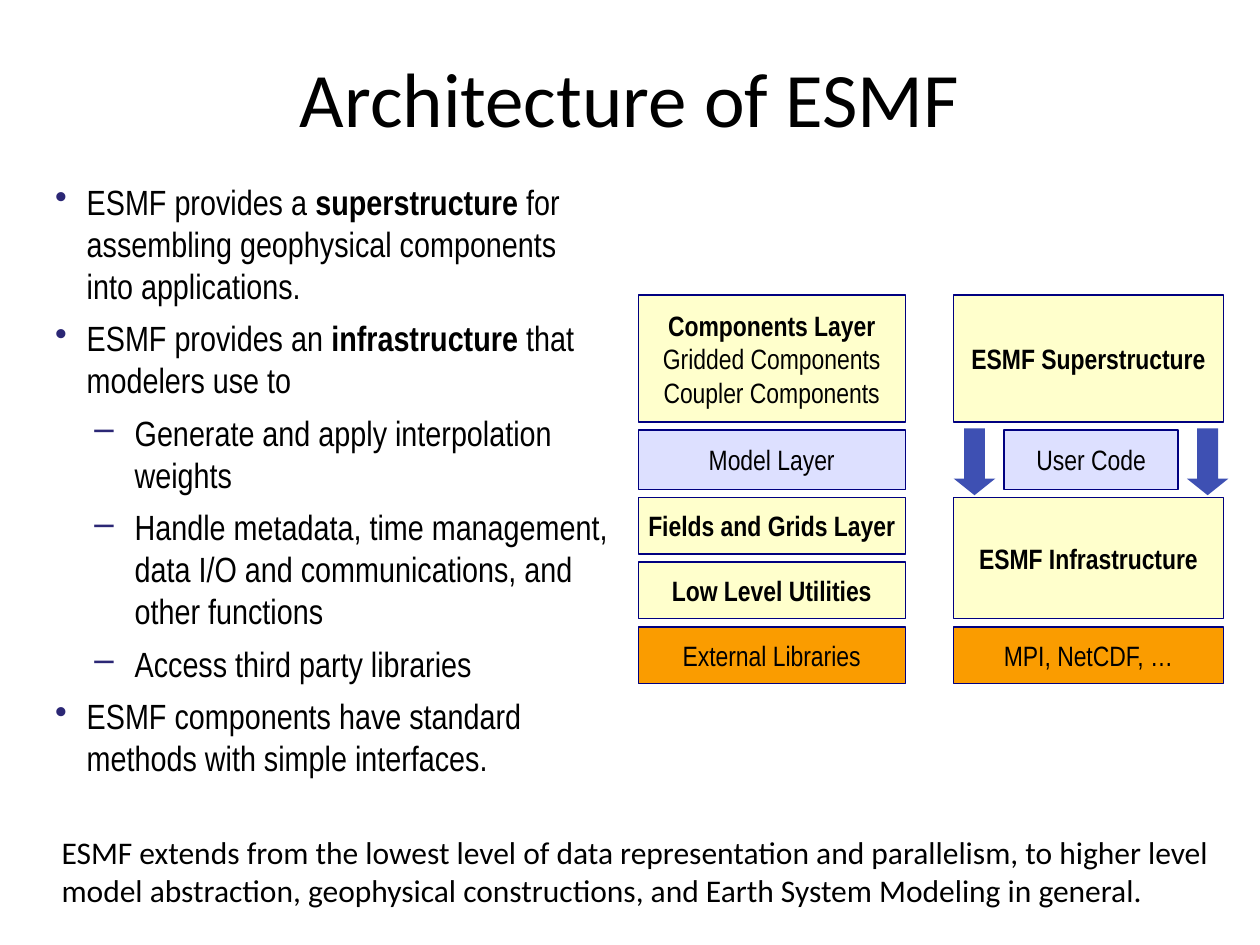
"""Build the ESMF architecture slide: bullets, layer stacks and a closing note."""
from lxml import etree
from pptx import Presentation
from pptx.dml.color import RGBColor
from pptx.enum import shapes, text
from pptx.oxml.ns import qn
from pptx.util import Pt

COLORS = {"text": "000000", "bullet": "2B2775", "line": "000080", "esmf": "FFFFCC",
          "user": "DDE0FF", "external": "FA9C00", "arrow": "3E50B3"}
TITLE = "Architecture of ESMF"
NOTE = ("ESMF extends from the lowest level of data representation and parallelism, to higher "
        "level model abstraction, geophysical constructions, and Earth System Modeling in general.")
# Each bullet: level, then (text, bold) runs
BULLETS = [
    (0, [("ESMF provides a ", False), ("superstructure", True),
         (" for assembling geophysical components into applications.", False)]),
    (0, [("ESMF provides an ", False), ("infrastructure", True),
         (" that modelers use to", False)]),
    (1, [("Generate and apply interpolation weights", False)]),
    (1, [("Handle metadata, time management, data I/O and communications, and other functions",
          False)]),
    (1, [("Access third party libraries", False)]),
    (0, [("ESMF components have standard methods with simple interfaces.", False)]),
]
LEVELS = [{"char": "•", "left": 18, "hang": 18}, {"char": "–", "left": 45.4, "hang": 23}]
LEFT, RIGHT, INNER = (364.7, 152.6), (545, 154.1), (573.8, 99.4)
ROW_TOP, ROW_GAP = 168.5, 4.6
ROW_HEIGHTS = [72.7, 33.8, 32.4, 32.4, 32.4]
# Each block: column, first row, last row, fill, (text, bold) lines
BLOCKS = [
    (LEFT, 0, 0, "esmf", [("Components Layer", True), ("Gridded Components", False),
                          ("Coupler Components", False)]),
    (LEFT, 1, 1, "user", [("Model Layer", False)]),
    (LEFT, 2, 2, "esmf", [("Fields and Grids Layer", True)]),
    (LEFT, 3, 3, "esmf", [("Low Level Utilities", True)]),
    (LEFT, 4, 4, "external", [("External Libraries", False)]),
    (RIGHT, 0, 0, "esmf", [("ESMF Superstructure", True)]),
    (INNER, 1, 1, "user", [("User Code", False)]),
    (RIGHT, 2, 3, "esmf", [("ESMF Infrastructure", True)]),
    (RIGHT, 4, 4, "external", [("MPI, NetCDF, …", False)]),
]
ARROW_LEFTS = [545, 678.2]
BODY = {"name": "Arial Narrow", "size": Pt(20)}
LABEL = {"name": "Arial Narrow", "size": Pt(16)}
HEADING = {"name": "Calibri", "size": Pt(44)}
CLOSING = {"name": "Calibri", "size": Pt(18)}


def rgb(key):
    return RGBColor.from_string(COLORS[key])


def apply(target, values):
    for name, value in values.items():
        setattr(target, name, value)


def add_run(p, content, fmt, bold=False):
    r = p.add_run()
    r.text = content
    apply(r.font, {**fmt, "bold": bold})
    r.font.color.rgb = rgb("text")


def add_bullet(p, level):
    style = LEVELS[level]
    pPr = p._p.get_or_add_pPr()
    pPr.set("marL", str(Pt(style["left"])))
    pPr.set("indent", str(-Pt(style["hang"])))
    color = etree.SubElement(pPr, qn("a:buClr"))
    etree.SubElement(color, qn("a:srgbClr"), val=COLORS["bullet"])
    etree.SubElement(pPr, qn("a:buChar"), char=style["char"])
    p.level = level


def add_text(s, box):
    tf = s.shapes.add_textbox(*map(Pt, box)).text_frame
    tf.word_wrap = True
    return tf


def paragraphs(tf, items):
    for i, item in enumerate(items):
        yield (tf.add_paragraph() if i else tf.paragraphs[0]), item


def add_shape(s, kind, box, fill):
    sp = s.shapes.add_shape(kind, *map(Pt, box))
    sp.shadow.inherit = False
    sp.fill.solid()
    sp.fill.fore_color.rgb = rgb(fill)
    return sp


def add_block(s, column, first, last, fill, lines):
    left, width = column
    top = ROW_TOP + sum(ROW_HEIGHTS[:first]) + first * ROW_GAP
    height = sum(ROW_HEIGHTS[first:last + 1]) + (last - first) * ROW_GAP
    sp = add_shape(s, shapes.MSO_SHAPE.RECTANGLE, (left, top, width, height), fill)
    sp.line.color.rgb = rgb("line")
    sp.line.width = Pt(0.75)
    tf = sp.text_frame
    apply(tf, {"word_wrap": False, "vertical_anchor": text.MSO_ANCHOR.MIDDLE})
    for p, (content, bold) in paragraphs(tf, lines):
        p.alignment = text.PP_ALIGN.CENTER
        add_run(p, content, LABEL, bold)


def main():
    prs = Presentation()
    apply(prs, {"slide_width": Pt(720), "slide_height": Pt(540)})
    s = prs.slides.add_slide(prs.slide_layouts[5])

    title = s.shapes.title
    apply(title, {"left": Pt(36), "top": Pt(10), "width": Pt(648), "height": Pt(90)})
    title.text_frame.vertical_anchor = text.MSO_ANCHOR.MIDDLE
    p = title.text_frame.paragraphs[0]
    p.alignment = text.PP_ALIGN.CENTER
    add_run(p, TITLE, HEADING)

    tf = add_text(s, (24.5, 99.4, 331.2, 377.3))
    for p, (level, runs) in paragraphs(tf, BULLETS):
        add_bullet(p, level)
        if p._p is not tf.paragraphs[0]._p:
            p.space_before = Pt(6)
        for content, bold in runs:
            add_run(p, content, BODY, bold)

    for block in BLOCKS:
        add_block(s, *block)
    for left in ARROW_LEFTS:
        sp = add_shape(s, shapes.MSO_SHAPE.DOWN_ARROW, (left, 244.8, 23.8, 38.2), "arrow")
        sp.adjustments[0], sp.adjustments[1] = 0.5, 0.4
        sp.line.fill.background()

    add_run(add_text(s, (28.1, 472.3, 673.2, 51.1)).paragraphs[0], NOTE, CLOSING)
    prs.save("out.pptx")


if __name__ == "__main__":
    main()
